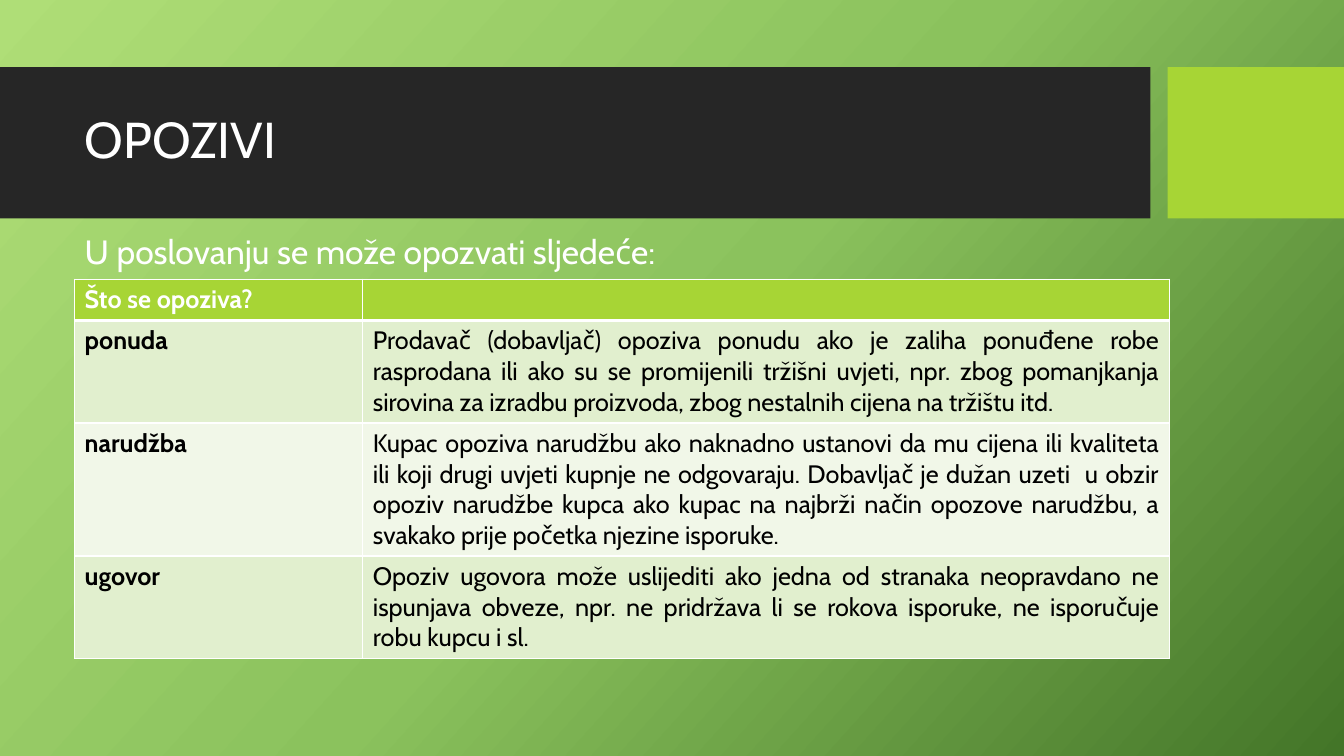
from copy import deepcopy

from lxml import etree
from pptx import Presentation
from pptx import util as u
from pptx.dml.color import RGBColor
from pptx.enum import shapes, text
from pptx.oxml import ns

WHITE, BLACK, DARK, LIME = "FFFFFF", "000000", "262626", "A7D535"
BANDS = ["E1EFCE", "F1F7E8"]
GRADIENT = [(0, "AFDE77"), (0.5, "8BC25D"), (1, "437528")]
LEFT, TEXT_WIDTH = 5.55, 78.85
BAND_TOP, BAND_HEIGHT = 8.9, 20
COLUMN_WIDTHS = [21.45, 60]
ROW_HEIGHTS = [5.47, 13.47, 17.6, 13.47]
ROWS = [
    ("Što se opoziva?", ""),
    ("ponuda", "Prodavač (dobavljač) opoziva ponudu ako je zaliha ponuđene robe "
     "rasprodana ili ako su se promijenili tržišni uvjeti, npr. zbog pomanjkanja "
     "sirovina za izradbu proizvoda, zbog nestalnih cijena na tržištu itd."),
    ("narudžba", "Kupac opoziva narudžbu ako naknadno ustanovi da mu cijena ili kvaliteta "
     "ili koji drugi uvjeti kupnje ne odgovaraju. Dobavljač je dužan uzeti  u obzir "
     "opoziv narudžbe kupca ako kupac na najbrži način opozove narudžbu, a "
     "svakako prije početka njezine isporuke."),
    ("ugovor", "Opoziv ugovora može uslijediti ako jedna od stranaka neopravdano ne "
     "ispunjava obveze, npr. ne pridržava li se rokova isporuke, ne isporučuje "
     "robu kupcu i sl."),
]


def color(value):
    """Turn a hex string into a colour."""
    return RGBColor.from_string(value)


class SlideBuilder:
    """Hold the style and the current slide; lengths are percent of its size."""

    font_name = "Cabin"

    def __init__(self):
        """Start a widescreen presentation with one title and body slide."""
        self.presentation = Presentation()
        self.presentation.slide_width = u.Inches(13.33)
        self.presentation.slide_height = u.Inches(7.5)
        self.slide = self.presentation.slides.add_slide(self.presentation.slide_layouts[1])

    def across(self, share):
        """Convert a share of the slide width to a length."""
        return u.Emu(int(self.presentation.slide_width * share / 100))

    def down(self, share):
        """Convert a share of the slide height to a length."""
        return u.Emu(int(self.presentation.slide_height * share / 100))

    def box(self, left, top, width, height):
        """Convert four shares to a position and size."""
        return self.across(left), self.down(top), self.across(width), self.down(height)

    def background(self, stops, angle):
        """Fill the background with a clockwise-angled gradient."""
        fill = self.slide.background.fill
        fill.gradient()
        fill.gradient_angle = 360 - angle
        first_stop = next(self.slide.element.iter(ns.qn("a:gs")))
        for _ in stops[2:]:
            first_stop.addnext(deepcopy(first_stop))
        for stop, (position, value) in zip(fill.gradient_stops, stops):
            stop.position = position
            stop.color.rgb = color(value)

    def block(self, left, width, fill):
        """Draw one rectangle of the title band."""
        shape = self.slide.shapes.add_shape(
            shapes.MSO_SHAPE.RECTANGLE, *self.box(left, BAND_TOP, width, BAND_HEIGHT))
        shape.shadow.inherit = False
        shape.fill.solid()
        shape.fill.fore_color.rgb = color(fill)
        shape.line.fill.background()

    def style(self, paragraph, size, value, bold=False):
        """Set the font of a paragraph."""
        font = paragraph.font
        font.name, font.size, font.bold = self.font_name, u.Pt(size), bold
        font.color.rgb = color(value)

    def placeholder(self, index, wording, place, size, anchor):
        """Fill, move and format a placeholder in front of the shapes."""
        shape = self.slide.placeholders[index]
        self.slide.shapes._spTree.append(shape.element)
        shape.left, shape.top, shape.width, shape.height = self.box(*place)
        frame = shape.text_frame
        frame.text = wording
        frame.auto_size = text.MSO_AUTO_SIZE.NONE
        frame.vertical_anchor = anchor
        paragraph = frame.paragraphs[0]
        paragraph.alignment = text.PP_ALIGN.LEFT
        paragraph.line_spacing = 0.9
        paragraph.space_before = u.Pt(0)
        properties = paragraph._p.get_or_add_pPr()
        properties.set("marL", "0")
        properties.set("indent", "0")
        etree.SubElement(properties, ns.qn("a:buNone"))
        self.style(paragraph, size, WHITE)

    def border(self, cell, side, points):
        """Draw one white border of a cell."""
        line = etree.SubElement(cell._tc.get_or_add_tcPr(), ns.qn("a:ln" + side), w=str(u.Pt(points)))
        fill = etree.SubElement(line, ns.qn("a:solidFill"))
        etree.SubElement(fill, ns.qn("a:srgbClr"), val=WHITE)

    def cell(self, cell, wording, row, column):
        """Fill and format one table cell by its row and column."""
        header = row == 0
        widths = {"L": 1, "R": 1, "T": 3 if row == 1 else 1, "B": 3 if header else 1}
        for side, points in widths.items():
            self.border(cell, side, points)
        cell.fill.solid()
        cell.fill.fore_color.rgb = color(LIME if header else BANDS[(row - 1) % 2])
        cell.text_frame.text = wording
        paragraph = cell.text_frame.paragraphs[0]
        justified = column == 1 and not header
        paragraph.alignment = text.PP_ALIGN.JUSTIFY if justified else text.PP_ALIGN.LEFT
        self.style(paragraph, 18, WHITE if header else BLACK, bold=not justified)

    def table(self, left, top, widths, heights, rows):
        """Add a table with a header row."""
        place = self.box(left, top, sum(widths), sum(heights))
        table = self.slide.shapes.add_table(len(rows), len(widths), *place).table
        table.horz_banding = False
        for column, width in zip(table.columns, widths):
            column.width = self.across(width)
        for row, height in zip(table.rows, heights):
            row.height = self.down(height)
        for row, wordings in enumerate(rows):
            for column, wording in enumerate(wordings):
                self.cell(table.cell(row, column), wording, row, column)


def main():
    """Build and save the slide."""
    builder = SlideBuilder()
    builder.background(GRADIENT, 42)
    builder.block(0, 85.6, DARK)
    builder.block(86.87, 13.13, LIME)
    builder.placeholder(0, "OPOZIVI", (LEFT, 10.93, TEXT_WIDTH, 15.73), 36, text.MSO_ANCHOR.MIDDLE)
    builder.placeholder(1, "U poslovanju se može opozvati sljedeće:",
                        (LEFT, 30.53, TEXT_WIDTH, 52.53), 24, text.MSO_ANCHOR.TOP)
    builder.table(LEFT, 36.93, COLUMN_WIDTHS, ROW_HEIGHTS, ROWS)
    builder.presentation.save("out.pptx")


if __name__ == "__main__":
    main()
